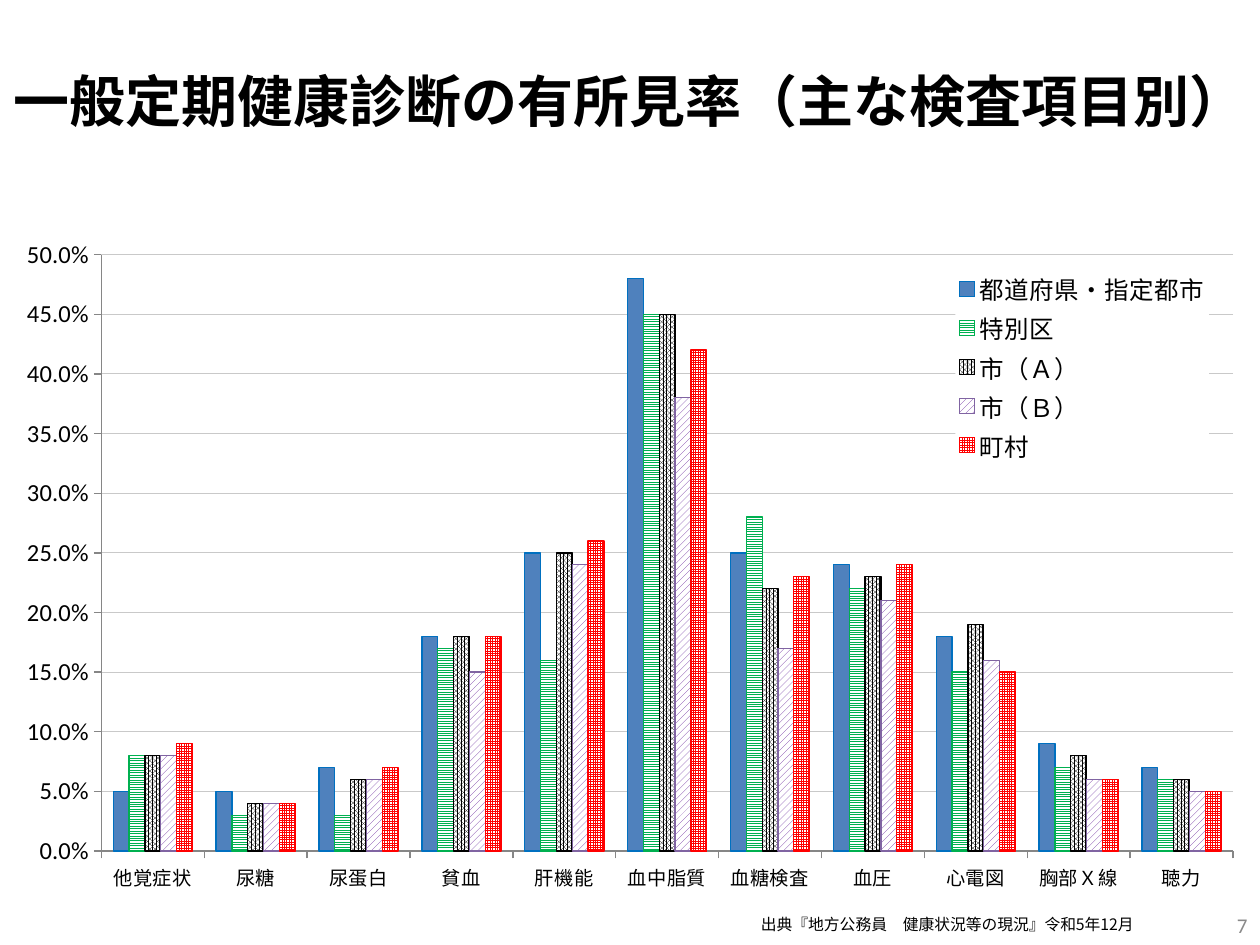
import dataclasses
from typing import Any, Optional

import pptx
import pptx.chart.data
import pptx.dml.color
import pptx.enum.chart
import pptx.enum.dml
import pptx.enum.text
import pptx.oxml
import pptx.oxml.ns
import pptx.util

Cm = pptx.util.Cm
Pt = pptx.util.Pt
Pattern = pptx.enum.dml.MSO_PATTERN
Align = pptx.enum.text.PP_ALIGN
Anchor = pptx.enum.text.MSO_ANCHOR


@dataclasses.dataclass(frozen=True)
class Box:
    left: float
    top: float
    width: float
    height: float

    def lengths(self) -> tuple:
        return tuple(Cm(v) for v in (self.left, self.top, self.width, self.height))


@dataclasses.dataclass(frozen=True)
class Group:
    name: str
    percents: tuple
    fill: str
    line: str
    pattern: Optional[Any] = None


EXAMS = ("他覚症状", "尿糖", "尿蛋白", "貧血", "肝機能", "血中脂質",
         "血糖検査", "血圧", "心電図", "胸部Ｘ線", "聴力")
GROUPS = (
    Group("都道府県・指定都市", (5, 5, 7, 18, 25, 48, 25, 24, 18, 9, 7),
          "4F81BD", "0070C0"),
    Group("特別区", (8, 3, 3, 17, 16, 45, 28, 22, 15, 7, 6),
          "00B050", "00B050", Pattern.LIGHT_HORIZONTAL),
    Group("市（Ａ）", (8, 4, 6, 18, 25, 45, 22, 23, 19, 8, 6),
          "000000", "000000", Pattern.PERCENT_80),
    Group("市（Ｂ）", (8, 4, 6, 15, 24, 38, 17, 21, 16, 6, 5),
          "7030A0", "8064A2", Pattern.WIDE_UPWARD_DIAGONAL),
    Group("町村", (9, 4, 7, 18, 26, 42, 23, 24, 15, 6, 5),
          "FF0000", "FF0000", Pattern.SMALL_GRID),
)


def rgb(value: str) -> pptx.dml.color.RGBColor:
    return pptx.dml.color.RGBColor.from_string(value)


def set_font(font: Any, size: float, name: str = "Calibri",
             color: str = "000000", bold: bool = False) -> None:
    font.size, font.name, font.bold = Pt(size), name, bold
    font.color.rgb = rgb(color)


def set_line(line: Any, color: str, width: float) -> None:
    line.color.rgb = rgb(color)
    line.width = Pt(width)


def add_text(slide: Any, words: str, box: Box, *, align: Any = Align.LEFT,
             anchor: Any = Anchor.MIDDLE, **font: Any) -> None:
    frame = slide.shapes.add_textbox(*box.lengths()).text_frame
    frame.word_wrap = True
    frame.vertical_anchor = anchor
    paragraph = frame.paragraphs[0]
    paragraph.alignment = align
    run = paragraph.add_run()
    run.text = words
    set_font(run.font, **font)


def manual_layout(x: float, y: float, w: float, h: float, inner: bool = False) -> Any:
    target = '<c:layoutTarget val="inner"/>' if inner else ""
    sizes = "".join(f'<c:{k} val="{v}"/>' for k, v in zip("xywh", (x, y, w, h)))
    return pptx.oxml.parse_xml(
        f'<c:layout {pptx.oxml.ns.nsdecls("c")}><c:manualLayout>{target}'
        f'<c:xMode val="edge"/><c:yMode val="edge"/>{sizes}</c:manualLayout></c:layout>')


def drop_layout(element: Any) -> None:
    for layout in element.findall(pptx.oxml.ns.qn("c:layout")):
        element.remove(layout)


def style_group(bars: Any, group: Group) -> None:
    fill = bars.format.fill
    if group.pattern is None:
        fill.solid()
        fill.fore_color.rgb = rgb(group.fill)
    else:
        fill.patterned()
        fill.pattern = group.pattern
        fill.fore_color.rgb = rgb(group.fill)
        fill.back_color.rgb = rgb("FFFFFF")
    set_line(bars.format.line, group.line, 0.75)
    bars.invert_if_negative = False


def style_axis(axis: Any, size: float) -> None:
    axis.major_tick_mark = pptx.enum.chart.XL_TICK_MARK.OUTSIDE
    axis.minor_tick_mark = pptx.enum.chart.XL_TICK_MARK.NONE
    set_font(axis.tick_labels.font, size)
    set_line(axis.format.line, "868686", 0.75)


def style_legend(chart: Any) -> None:
    chart.has_legend = True
    legend = chart.legend
    legend.position = pptx.enum.chart.XL_LEGEND_POSITION.RIGHT
    legend.include_in_layout = True
    set_font(legend.font, 14)
    element = legend._element
    drop_layout(element)
    element.find(pptx.oxml.ns.qn("c:legendPos")).addnext(
        manual_layout(0.77, 0.05, 0.21, 0.3))
    background = pptx.oxml.parse_xml(
        f'<c:spPr {pptx.oxml.ns.nsdecls("c", "a")}><a:solidFill>'
        '<a:srgbClr val="FFFFFF"/></a:solidFill><a:ln><a:noFill/></a:ln></c:spPr>')
    element.find(pptx.oxml.ns.qn("c:txPr")).addprevious(background)


def add_findings_chart(slide: Any, box: Box) -> None:
    findings = pptx.chart.data.CategoryChartData(number_format="0.0%")
    findings.categories = EXAMS
    for group in GROUPS:
        findings.add_series(group.name, [percent / 100 for percent in group.percents])
    chart = slide.shapes.add_chart(
        pptx.enum.chart.XL_CHART_TYPE.COLUMN_CLUSTERED, *box.lengths(), findings).chart
    chart.has_title = False
    set_font(chart.font, 18)
    plot = chart.plots[0]
    plot.vary_by_categories = False
    plot.gap_width, plot.overlap = 150, 0
    for bars, group in zip(plot.series, GROUPS):
        style_group(bars, group)

    style_axis(chart.category_axis, 11)
    rate = chart.value_axis
    style_axis(rate, 14)
    rate.minimum_scale, rate.maximum_scale, rate.major_unit = 0, 0.5, 0.05
    rate.has_major_gridlines = True
    set_line(rate.major_gridlines.format.line, "C9C9C9", 0.5)
    rate.tick_labels.number_format = "0.0%"
    rate.tick_labels.number_format_is_linked = False

    style_legend(chart)
    area = chart._chartSpace.chart.plotArea
    drop_layout(area)
    area.insert(0, manual_layout(0.063, 0.031, 0.937, 0.898, inner=True))


def main() -> None:
    """Build the slide on health check finding rates and save it."""
    deck = pptx.Presentation()
    deck.slide_width, deck.slide_height = Cm(25.4), Cm(19.05)
    slide = deck.slides.add_slide(deck.slide_layouts[6])
    add_text(slide, "一般定期健康診断の有所見率（主な検査項目別）", Box(0, 0.71, 25.4, 2.6),
             align=Align.CENTER, size=32, name="Arial", bold=True)
    add_findings_chart(slide, Box(0.51, 4.72, 24.36, 13.39))
    add_text(slide, "7", Box(19.48, 18.14, 5.92, 1.02),
             align=Align.RIGHT, size=12, color="898989")
    add_text(slide, "出典『地方公務員　健康状況等の現況』令和5年12月", Box(15.09, 18.31, 8.56, 1.02),
             anchor=Anchor.TOP, size=9, name="Noto Sans CJK JP")
    deck.save("out.pptx")


if __name__ == "__main__":
    main()
